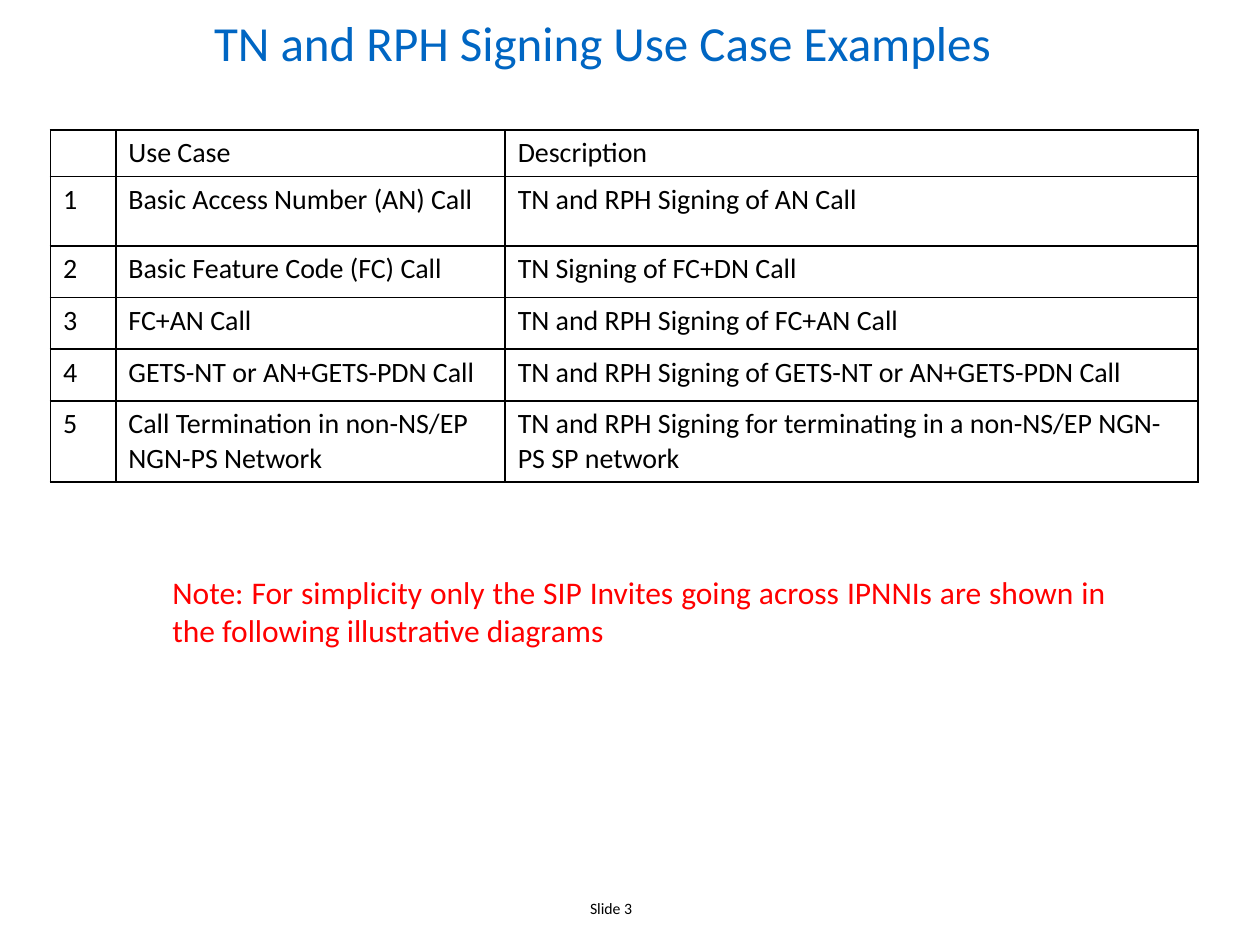
from lxml.etree import SubElement
from pptx import Presentation
from pptx.dml.color import RGBColor
from pptx.enum.text import MSO_ANCHOR, PP_ALIGN
from pptx.oxml.ns import qn
from pptx.util import Inches, Pt

# Content
TITLE = "TN and RPH Signing Use Case Examples"
USE_CASES = [
    ("", "Use Case", "Description"),
    ("1", "Basic Access Number (AN) Call", "TN and RPH Signing of AN Call"),
    ("2", "Basic Feature Code (FC) Call", "TN Signing of FC+DN Call"),
    ("3", "FC+AN Call", "TN and RPH Signing of FC+AN Call"),
    ("4", "GETS-NT or AN+GETS-PDN Call",
     "TN and RPH Signing of GETS-NT or AN+GETS-PDN Call"),
    ("5", "Call Termination in non-NS/EP NGN-PS Network",
     "TN and RPH Signing for terminating in a non-NS/EP NGN-PS SP network"),
]
NOTE = ("Note: For simplicity only the SIP Invites going across IPNNIs are shown in "
        "the following illustrative diagrams")
FOOTER = "Slide 3"

COLUMN_WIDTHS = [0.52, 3.09, 5.5]
ROW_HEIGHTS = [0.37, 0.55, 0.41, 0.41, 0.41, 0.64]
BLACK, BLUE, RED = "000000", "0066C3", "FF0000"


def color(value):
    return RGBColor.from_string(value)


def write(frame, text, size, ink, align):
    frame.word_wrap = True
    para = frame.paragraphs[0]
    para.alignment = align
    span = para.add_run()
    span.text = text
    span.font.name = "Calibri"
    span.font.size = Pt(size)
    span.font.color.rgb = color(ink)


def add_text(page, place, text, size, ink, align):
    box = page.shapes.add_textbox(*map(Inches, place))
    write(box.text_frame, text, size, ink, align)


def add_borders(cell):
    properties = cell._tc.get_or_add_tcPr()
    for index, side in enumerate(("lnL", "lnR", "lnT", "lnB")):
        line = properties.makeelement(qn(f"a:{side}"), {"w": str(Pt(1))})
        fill = SubElement(line, qn("a:solidFill"))
        SubElement(fill, qn("a:srgbClr"), val=BLACK)
        properties.insert(index, line)


def add_use_case_table(page):
    frame = page.shapes.add_table(
        len(USE_CASES), len(COLUMN_WIDTHS), Inches(0.4), Inches(1.03),
        Inches(sum(COLUMN_WIDTHS)), Inches(sum(ROW_HEIGHTS)))
    table = frame.table
    table.first_row = table.horz_banding = False
    for column, width in zip(table.columns, COLUMN_WIDTHS):
        column.width = Inches(width)
    for row, height, texts in zip(table.rows, ROW_HEIGHTS, USE_CASES):
        row.height = Inches(height)
        for cell, text in zip(row.cells, texts):
            cell.fill.background()
            add_borders(cell)
            if text:
                write(cell.text_frame, text, 16, BLACK, PP_ALIGN.LEFT)
            else:
                # Keep the empty corner as low as its row
                SubElement(cell.text_frame.paragraphs[0]._p,
                           qn("a:endParaRPr"), sz="1600")


def main():
    deck = Presentation()
    deck.slide_width, deck.slide_height = Inches(10), Inches(7.5)
    page = deck.slides.add_slide(deck.slide_layouts[5])

    # Title
    title = page.shapes.title
    title.left, title.top, title.width, title.height = map(
        Inches, (0.28, 0.08, 9, 0.51))
    title.text_frame.vertical_anchor = MSO_ANCHOR.MIDDLE
    write(title.text_frame, TITLE, 28, BLUE, PP_ALIGN.CENTER)

    # Table, note and slide number
    add_use_case_table(page)
    add_text(page, (1.27, 4.5, 7.61, 0.71), NOTE, 18, RED, PP_ALIGN.JUSTIFY)
    add_text(page, (3.85, 7.08, 2, 0.25), FOOTER, 9, BLACK, PP_ALIGN.CENTER)

    deck.save("out.pptx")


if __name__ == "__main__":
    main()
